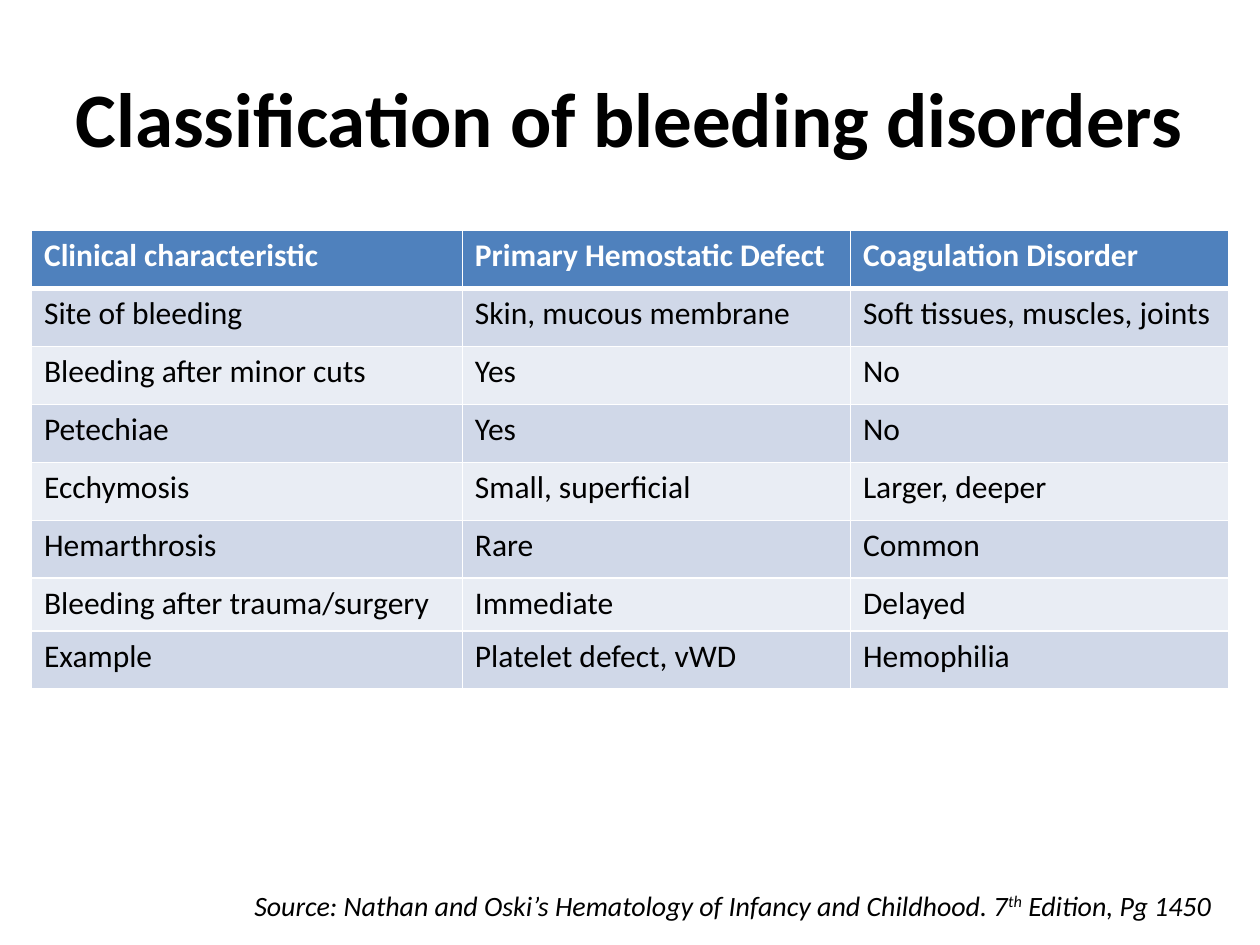
from lxml.etree import SubElement
from pptx import Presentation
from pptx.dml.color import RGBColor
from pptx.enum.text import MSO_ANCHOR, MSO_AUTO_SIZE, PP_ALIGN
from pptx.oxml.ns import qn
from pptx.util import Inches, Pt

BLACK = RGBColor(0x00, 0x00, 0x00)
WHITE = RGBColor(0xFF, 0xFF, 0xFF)
HEADER_BLUE = RGBColor(0x4F, 0x81, 0xBD)
BAND_COLORS = (RGBColor(0xE9, 0xED, 0xF4), RGBColor(0xD0, 0xD8, 0xE8))

DISORDERS = [
    ("Clinical characteristic", "Primary Hemostatic Defect", "Coagulation Disorder"),
    ("Site of bleeding", "Skin, mucous membrane", "Soft tissues, muscles, joints"),
    ("Bleeding after minor cuts", "Yes", "No"),
    ("Petechiae", "Yes", "No"),
    ("Ecchymosis", "Small, superficial", "Larger, deeper"),
    ("Hemarthrosis", "Rare", "Common"),
    ("Bleeding after trauma/surgery", "Immediate", "Delayed"),
    ("Example", "Platelet defect, vWD", "Hemophilia"),
]
COLUMN_WIDTHS = (3.42, 3.08, 3)
ROW_HEIGHTS = (0.46,) * 6 + (0.42, 0.46)


class SlideBuilder:
    font_name = "Calibri"

    def __init__(self, slide):
        self.slide = slide

    def format_run(self, run, size, color=BLACK, bold=False, italic=False):
        font = run.font
        font.name, font.size = self.font_name, Pt(size)
        font.bold, font.italic = bold, italic
        font.color.rgb = color

    def add_title(self, text, left, top, width, height):
        title = self.slide.shapes.title
        title.left, title.top = Inches(left), Inches(top)
        title.width, title.height = Inches(width), Inches(height)
        text_frame = title.text_frame
        text_frame.text = text
        text_frame.vertical_anchor = MSO_ANCHOR.MIDDLE
        paragraph = text_frame.paragraphs[0]
        paragraph.alignment = PP_ALIGN.CENTER
        self.format_run(paragraph.runs[0], 44, bold=True)

    def set_borders(self, cell, top, bottom):
        """Draw white cell borders; top and bottom are widths in points."""
        properties = cell._tc.get_or_add_tcPr()
        for side, width in (("L", 1), ("R", 1), ("T", top), ("B", bottom)):
            line = SubElement(properties, qn(f"a:ln{side}"), w=str(Pt(width)))
            fill = SubElement(line, qn("a:solidFill"))
            SubElement(fill, qn("a:srgbClr"), val=str(WHITE))

    def add_table(self, rows, left, top, column_widths, row_heights):
        table = self.slide.shapes.add_table(
            len(rows), len(column_widths), Inches(left), Inches(top),
            Inches(sum(column_widths)), Inches(sum(row_heights))).table
        for column, width in zip(table.columns, column_widths):
            column.width = Inches(width)
        for row, height in zip(table.rows, row_heights):
            row.height = Inches(height)
        for row_index, texts in enumerate(rows):
            is_header = row_index == 0
            for column_index, text in enumerate(texts):
                cell = table.cell(row_index, column_index)
                self.set_borders(cell, top=3 if row_index == 1 else 1,
                                 bottom=3 if is_header else 1)
                cell.fill.solid()
                cell.fill.fore_color.rgb = (
                    HEADER_BLUE if is_header else BAND_COLORS[row_index % 2])
                cell.text_frame.text = text
                self.format_run(cell.text_frame.paragraphs[0].runs[0], 18,
                                WHITE if is_header else BLACK, bold=is_header)

    def add_source(self, parts, left, top, width, height):
        """Add an italic line whose parts are (text, is_superscript) pairs."""
        text_box = self.slide.shapes.add_textbox(
            Inches(left), Inches(top), Inches(width), Inches(height))
        text_frame = text_box.text_frame
        text_frame.word_wrap = False
        text_frame.auto_size = MSO_AUTO_SIZE.SHAPE_TO_FIT_TEXT
        for text, is_superscript in parts:
            run = text_frame.paragraphs[0].add_run()
            run.text = text
            self.format_run(run, 16, italic=True)
            if is_superscript:
                run.font._element.set("baseline", "30000")


def main():
    presentation = Presentation()
    presentation.slide_width, presentation.slide_height = Inches(10), Inches(7.5)
    title_only = presentation.slide_layouts[5]
    builder = SlideBuilder(presentation.slides.add_slide(title_only))
    builder.add_table(DISORDERS, 0.25, 1.83, COLUMN_WIDTHS, ROW_HEIGHTS)
    builder.add_title("Classification of bleeding disorders", 0.5, 0.3, 9, 1.25)
    builder.add_source(
        [("Source: Nathan and Oski’s Hematology of Infancy and Childhood. 7", False),
         ("th", True),
         (" Edition, Pg 1450", False)],
        1.92, 7, 7.92, 0.37)
    presentation.save("out.pptx")


if __name__ == "__main__":
    main()
